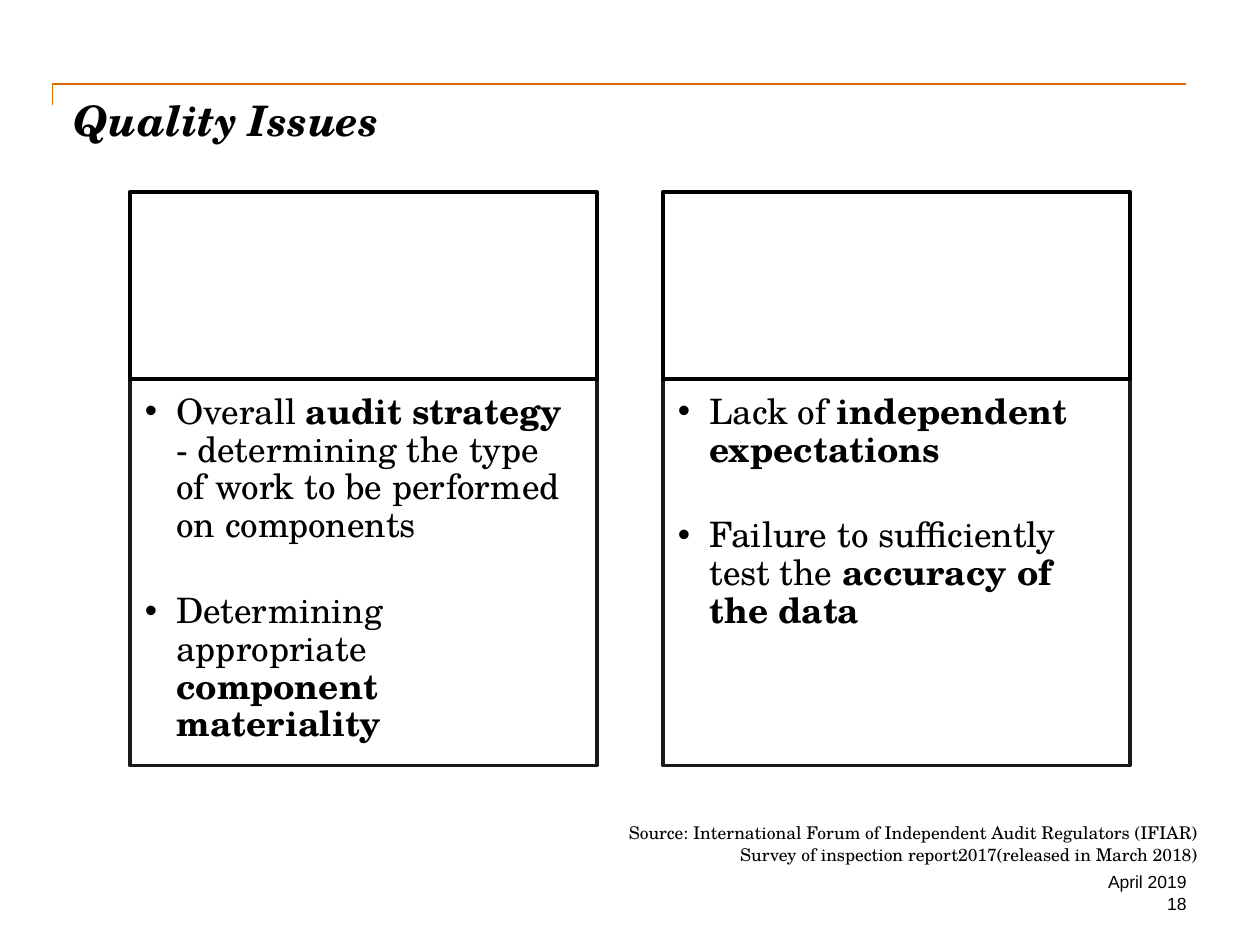
"""Build the Quality Issues slide with two bulleted panels."""
from dataclasses import dataclass

from pptx import Presentation
from pptx.dml.color import RGBColor
from pptx.enum.shapes import MSO_SHAPE
from pptx.enum.text import MSO_ANCHOR, MSO_AUTO_SIZE, PP_ALIGN
from pptx.util import Pt

RECTANGLE = MSO_SHAPE.RECTANGLE
TOP = MSO_ANCHOR.TOP
NO_AUTOFIT = MSO_AUTO_SIZE.NONE
LEFT, RIGHT = PP_ALIGN.LEFT, PP_ALIGN.RIGHT

COLORS = {"accent": "DC6900", "text": "000000", "fill": "FFFFFF", "body_line": "1A1A1A"}
SERIF, SANS = "TeX Gyre Schola", "Arial"
PANEL_LEFT, PANEL_PITCH, PANEL_WIDTH = 74.16, 304.56, 267.12
HEADER_TOP, HEADER_HEIGHT = 109.6, 106.9
BODY_TOP, BODY_HEIGHT = HEADER_TOP + HEADER_HEIGHT, 221
BULLET_INDENT, BULLET_GAP = 18, 27.4


@dataclass(frozen=True)
class Run:
    text: str
    bold: bool = False


@dataclass(frozen=True)
class Panel:
    bullets: tuple[tuple[Run, ...], ...]


@dataclass(frozen=True)
class Note:
    lines: tuple[str, ...]
    left: float
    top: float
    width: float
    height: float
    font: str


PANELS = (
    Panel((
        (Run("Overall "), Run("audit strategy", True),
         Run(" - determining the type of work to be performed on components")),
        (Run("Determining appropriate "), Run("component materiality", True)),
    )),
    Panel((
        (Run("Lack of "), Run("independent expectations", True)),
        (Run("Failure to sufficiently test the "), Run("accuracy of the data", True)),
    )),
)
NOTES = (
    Note(("18",), 558, 510, 120, 12, SANS),
    Note(("April 2019",), 558, 498, 120, 12, SANS),
    Note(("Source: International Forum of Independent Audit Regulators (IFIAR)",
          "Survey of inspection report2017(released in March 2018)"),
         282, 470, 402, 30, SERIF),
)


def color(name: str) -> RGBColor:
    return RGBColor.from_string(COLORS[name])


def place(shape, left: float, top: float, width: float, height: float) -> None:
    shape.left, shape.top = Pt(left), Pt(top)
    shape.width, shape.height = Pt(width), Pt(height)


def prepare_frame(shape, insets: tuple[float, float, float, float] = (0, 0, 0, 0)):
    frame = shape.text_frame
    frame.word_wrap = True
    frame.auto_size = NO_AUTOFIT
    frame.vertical_anchor = TOP
    (frame.margin_left, frame.margin_top,
     frame.margin_right, frame.margin_bottom) = map(Pt, insets)
    return frame


def set_font(paragraph, name: str, size: float) -> None:
    paragraph.font.name = name
    paragraph.font.size = Pt(size)
    paragraph.font.color.rgb = color("text")


def paint(shape, line: str) -> None:
    shape.fill.solid()
    shape.fill.fore_color.rgb = color("fill")
    shape.line.color.rgb = color(line)
    shape.line.width = Pt(2)


def draw_rule(slide) -> None:
    builder = slide.shapes.build_freeform(Pt(30), Pt(60))
    builder.add_line_segments([(Pt(30), Pt(48)), (Pt(678), Pt(48))], close=False)
    rule = builder.convert_to_shape()
    rule.shadow.inherit = False
    rule.fill.background()
    rule.line.color.rgb = color("accent")
    rule.line.width = Pt(1)


def draw_title(title) -> None:
    place(title, 42, 54, 636, 72)
    paragraph = prepare_frame(title).paragraphs[0]
    paragraph.text = "Quality Issues"
    paragraph.alignment = LEFT
    set_font(paragraph, SERIF, 24)
    paragraph.font.bold = paragraph.font.italic = True


def draw_panel(slide, body, panel: Panel, left: float) -> None:
    header = slide.shapes.add_shape(
        RECTANGLE, Pt(left), Pt(HEADER_TOP), Pt(PANEL_WIDTH), Pt(HEADER_HEIGHT))
    header.shadow.inherit = False
    paint(header, "text")

    place(body, left, BODY_TOP, PANEL_WIDTH, BODY_HEIGHT)
    paint(body, "body_line")
    frame = prepare_frame(body, (8.64, 8.64, 11.52, 12.24))
    for index, bullet in enumerate(panel.bullets):
        paragraph = frame.add_paragraph() if index else frame.paragraphs[0]
        set_font(paragraph, SERIF, 20)
        paragraph.line_spacing = 0.9
        paragraph.space_before = Pt(BULLET_GAP if index else 0)
        properties = paragraph._p.get_or_add_pPr()
        properties.set("marL", str(Pt(BULLET_INDENT)))
        properties.set("indent", str(-Pt(BULLET_INDENT)))
        for part in bullet:
            run = paragraph.add_run()
            run.text = part.text
            run.font.bold = part.bold


def draw_note(slide, note: Note) -> None:
    box = slide.shapes.add_textbox(
        Pt(note.left), Pt(note.top), Pt(note.width), Pt(note.height))
    frame = prepare_frame(box)
    for index, line in enumerate(note.lines):
        paragraph = frame.add_paragraph() if index else frame.paragraphs[0]
        paragraph.text = line
        paragraph.alignment = RIGHT
        set_font(paragraph, note.font, 10)


def main() -> None:
    presentation = Presentation()
    presentation.slide_width, presentation.slide_height = Pt(720), Pt(540)
    slide = presentation.slides.add_slide(
        presentation.slide_layouts.get_by_name("Two Content"))
    title, *bodies = slide.placeholders
    draw_rule(slide)
    draw_title(title)
    for note in NOTES:
        draw_note(slide, note)
    for index, (body, panel) in enumerate(zip(bodies, PANELS)):
        draw_panel(slide, body, panel, PANEL_LEFT + index * PANEL_PITCH)
    presentation.save("out.pptx")


if __name__ == "__main__":
    main()
